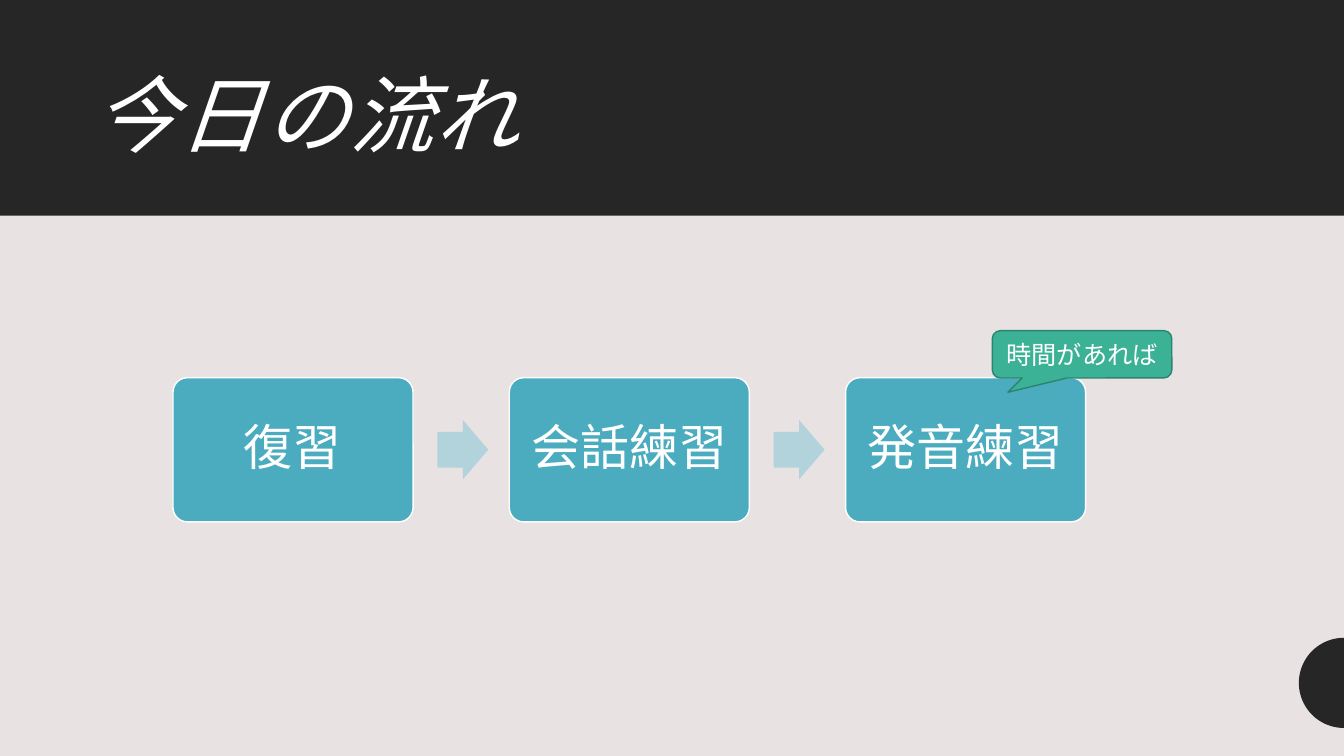
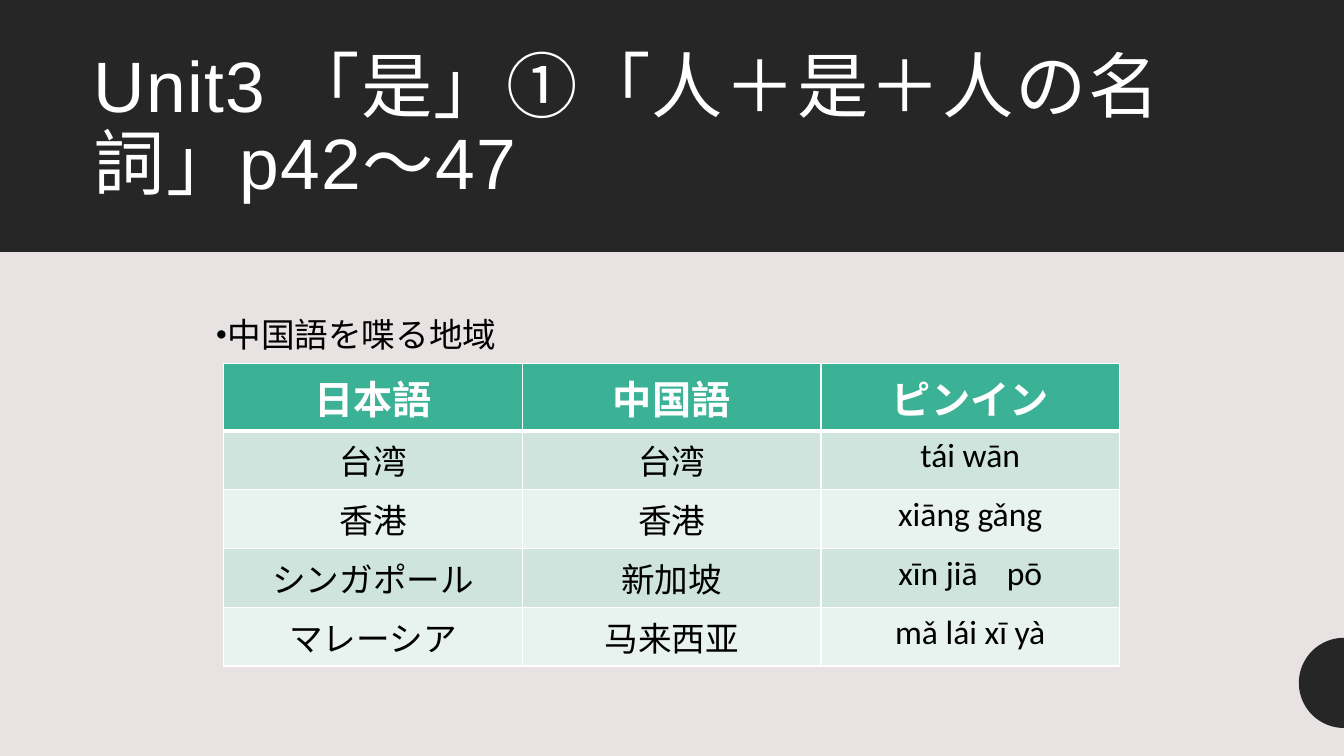
from dataclasses import dataclass
from math import cos, pi, sin

from lxml import etree
from pptx import Presentation
from pptx.dml.color import RGBColor
from pptx.enum.shapes import MSO_SHAPE
from pptx.enum.text import MSO_ANCHOR, PP_ALIGN
from pptx.oxml.ns import qn
from pptx.util import Pt

RECT = MSO_SHAPE.RECTANGLE
ROUND = MSO_SHAPE.ROUNDED_RECTANGLE
ARROW = MSO_SHAPE.RIGHT_ARROW
BUBBLE = MSO_SHAPE.ROUNDED_RECTANGULAR_CALLOUT
LEFT = PP_ALIGN.LEFT
CENTER = PP_ALIGN.CENTER
TOP = MSO_ANCHOR.TOP
MIDDLE = MSO_ANCHOR.MIDDLE


@dataclass(frozen=True)
class Theme:
    wide: int = 960
    high: int = 540
    head: str = "Arial"
    body: str = "Calibri"
    dark: str = "262626"
    back: str = "E8E2E3"
    white: str = "FFFFFF"
    black: str = "000000"
    teal: str = "4BACC0"
    pale: str = "B2D2DC"
    green: str = "3BB195"
    edge: str = "2C836E"
    bands: tuple = ("E8F2EF", "CEE4DD")
    step: int = 35
    label: int = 28
    plain: int = 24
    small: int = 18


def put_text(frame, text, *, size, color, font=Theme.body, bold=False,
             slant=False, align=LEFT, lead=None, track=None, dot=None):
    para = frame.paragraphs[0]
    para.alignment = align
    if lead:
        para.line_spacing = lead
    if dot:
        props = para._p.get_or_add_pPr()
        props.set("marL", str(Pt(dot)))
        props.set("indent", str(-Pt(dot)))
        etree.SubElement(props, qn("a:buSzPct"), val="70000")
        etree.SubElement(props, qn("a:buFont"), typeface=font)
        etree.SubElement(props, qn("a:buChar"), char="•")
    run = para.add_run()
    run.text = text
    face = run.font
    face.name, face.size = font, Pt(size)
    face.bold, face.italic = bold, slant
    face.color.rgb = RGBColor.from_string(color)
    if track:
        run._r.get_or_add_rPr().set("spc", str(track * 100))


class Deck:
    def __init__(self, theme):
        self.theme = theme
        self.show = Presentation()
        self.show.slide_width = Pt(theme.wide)
        self.show.slide_height = Pt(theme.high)
        self.slide = None

    def paint(self, shape, fill, line=None):
        shape.shadow.inherit = False
        shape.fill.solid()
        shape.fill.fore_color.rgb = RGBColor.from_string(fill)
        if line:
            shape.line.color.rgb = RGBColor.from_string(line)
            shape.line.width = Pt(1)
        else:
            shape.line.fill.background()

    def shape(self, kind, box, fill, line=None, tune=()):
        item = self.slide.shapes.add_shape(kind, *map(Pt, box))
        self.paint(item, fill, line)
        for spot, value in enumerate(tune):
            item.adjustments[spot] = value
        return item

    def text(self, box, text, anchor=TOP, **style):
        frame = self.slide.shapes.add_textbox(*map(Pt, box)).text_frame
        frame.word_wrap = True
        frame.vertical_anchor = anchor
        put_text(frame, text, **style)

    def label(self, shape, text, size, pad=7.2, lead=None):
        frame = shape.text_frame
        frame.word_wrap = True
        frame.vertical_anchor = MIDDLE
        frame.margin_left = frame.margin_right = Pt(pad)
        put_text(frame, text, size=size, color=self.theme.white,
                 align=CENTER, lead=lead)

    def disc(self, mid=487.8, radius=32.2, parts=48):
        right = self.theme.wide
        turns = [pi / 2 + pi * part / parts for part in range(parts + 1)]
        spots = [(Pt(right + radius * cos(turn)), Pt(mid + radius * sin(turn)))
                 for turn in turns]
        pen = self.slide.shapes.build_freeform(*spots[0])
        pen.add_line_segments(spots[1:], close=True)
        self.paint(pen.convert_to_shape(), self.theme.dark)

    def page(self, title, band, top, high, size, slant=False):
        theme = self.theme
        self.slide = self.show.slides.add_slide(self.show.slide_layouts[6])
        fill = self.slide.background.fill
        fill.solid()
        fill.fore_color.rgb = RGBColor.from_string(theme.back)
        self.shape(RECT, (0, 0, theme.wide, theme.high), theme.back)
        self.shape(RECT, (0, 0, theme.wide, band), theme.dark)
        self.text((59.8, top, 840, high), title, MIDDLE, size=size,
                  color=theme.white, font=theme.head, slant=slant,
                  lead=0.9, track=1)
        self.disc()

    def flow(self, names, left=123.6, top=269.8, pitch=240.2):
        theme = self.theme
        for spot, name in enumerate(names):
            start = left + spot * pitch
            if spot:
                self.shape(ARROW, (start - 51.4, top + 30.2, 36.4, 42.5),
                           theme.pale, tune=(0.6, 0.5))
            card = self.shape(ROUND, (start, top, 171.5, 103),
                              theme.teal, theme.white, (0.1,))
            self.label(card, name, theme.step, 8, 0.9)

    def bubble(self, box, text):
        theme = self.theme
        note = self.shape(BUBBLE, box, theme.green, theme.edge,
                          (-0.413, 0.803, 0.167))
        self.label(note, text, theme.small)

    def rule(self, cell, side, width):
        line = etree.SubElement(cell._tc.get_or_add_tcPr(), qn("a:ln" + side),
                                w=str(Pt(width)))
        fill = etree.SubElement(line, qn("a:solidFill"))
        etree.SubElement(fill, qn("a:srgbClr"), val=self.theme.white)

    def table(self, rows, left, top, wide, tall=48, high=42):
        theme = self.theme
        count = len(rows[0])
        full = tall + high * (len(rows) - 1)
        grid = self.slide.shapes.add_table(
            len(rows), count, Pt(left), Pt(top), Pt(wide), Pt(full)).table
        for col in grid.columns:
            col.width = Pt(wide / count)
        for y, row in enumerate(rows):
            head = y == 0
            grid.rows[y].height = Pt(tall if head else high)
            fill = theme.green if head else theme.bands[y % 2]
            for x, text in enumerate(row):
                cell = grid.cell(y, x)
                for side in "LRTB":
                    thick = (y, side) in ((0, "B"), (1, "T"))
                    self.rule(cell, side, 3 if thick else 1)
                cell.fill.solid()
                cell.fill.fore_color.rgb = RGBColor.from_string(fill)
                put_text(cell.text_frame, text, bold=head, align=CENTER,
                         size=theme.label if head else theme.plain,
                         color=theme.white if head else theme.black)


def main():
    theme = Theme()
    deck = Deck(theme)

    deck.page("今日の流れ", 154, 33.2, 104.4, 60, slant=True)
    deck.flow(["復習", "会話練習", "発音練習"])
    deck.bubble((708.8, 236.2, 128.2, 33.8), "時間があれば")

    deck.page("Unit3 「是」①「人＋是＋人の名詞」p42～47", 180, 30, 122.4, 51)
    deck.table([
        ("日本語", "中国語", "ピンイン"),
        ("台湾", "台湾", "tái wān"),
        ("香港", "香港", "xiāng gǎng"),
        ("シンガポール", "新加坡", "xīn jiā\t pō"),
        ("マレーシア", "马来西亚", "mǎ lái xī yà"),
    ], 159.8, 259.8, 640)
    deck.text((147, 220.6, 236, 36), "中国語を喋る地域",
              size=theme.plain, color=theme.black, dot=8.4)

    deck.show.save("out.pptx")


if __name__ == "__main__":
    main()
